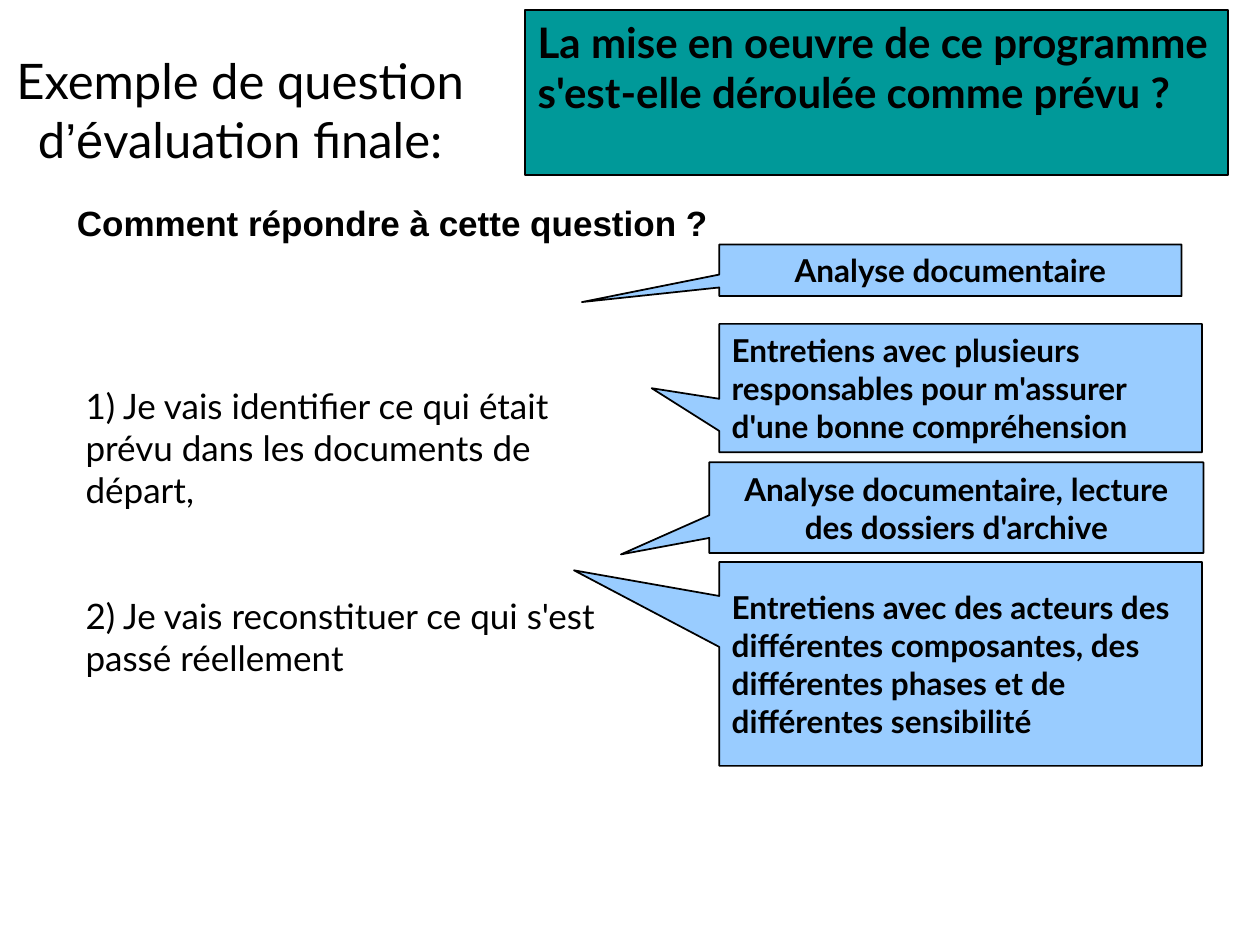
import pptx
import pptx.dml.color
import pptx.enum.shapes
import pptx.enum.text
import pptx.util
from dataclasses import dataclass

Cm, Pt = pptx.util.Cm, pptx.util.Pt
Align = pptx.enum.text.PP_ALIGN
Anchor = pptx.enum.text.MSO_ANCHOR
Shape = pptx.enum.shapes.MSO_SHAPE


@dataclass(frozen=True)
class Theme:
    ink: str = "000000"
    question_fill: str = "009999"
    callout_fill: str = "99CCFF"
    font: str = "Lato"
    alternate_font: str = "Arial"
    title: int = 28
    question: int = 24
    body: int = 20
    callout: int = 18


theme = Theme()


def write(shape, texts, size, font=theme.font, bold=False, align=Align.LEFT, anchor=Anchor.TOP):
    """Fill the text frame with one uniformly formatted paragraph per text."""
    frame = shape.text_frame
    frame.word_wrap = True
    frame.auto_size = pptx.enum.text.MSO_AUTO_SIZE.NONE
    frame.vertical_anchor = anchor
    frame.text = "\n".join(texts)
    for paragraph in frame.paragraphs:
        paragraph.alignment = align
        paragraph.space_before = Pt(0)
        paragraph.font.name = font
        paragraph.font.size = Pt(size)
        paragraph.font.bold = bold
        paragraph.font.color.rgb = pptx.dml.color.RGBColor.from_string(theme.ink)


def add_box(kind, box, fill):
    shape = slide.shapes.add_shape(kind, *map(Cm, box))
    shape.shadow.inherit = False
    shape.fill.solid()
    shape.fill.fore_color.rgb = pptx.dml.color.RGBColor.from_string(fill)
    shape.line.color.rgb = pptx.dml.color.RGBColor.from_string(theme.ink)
    shape.line.width = Pt(1)
    return shape


presentation = pptx.Presentation()
presentation.slide_width, presentation.slide_height = Cm(25.4), Cm(19.05)
slide = presentation.slides.add_slide(presentation.slide_layouts[1])

# Title, with the apostrophe and the accent in the alternate font
title = slide.shapes.title
title.left, title.top, title.width, title.height = map(Cm, (0, 0.71, 9.68, 3))
write(title, ["Exemple de question d"], theme.title, align=Align.CENTER, anchor=Anchor.MIDDLE)
title_paragraph = title.text_frame.paragraphs[0]
accent = title_paragraph.add_run()
accent.text = "’é"
accent.font.name = theme.alternate_font
title_paragraph.add_run().text = "valuation finale:"

# Evaluation question
question = add_box(Shape.RECTANGLE, (10.59, 0.2, 14.17, 3.33), theme.question_fill)
write(question, ["La mise en oeuvre de ce programme s'est-elle déroulée comme prévu ?"],
      theme.question, bold=True)

heading = slide.shapes.add_textbox(Cm(1.3), Cm(3.94), Cm(14), Cm(1.09))
write(heading, ["Comment répondre à cette question ?"], theme.body,
      font=theme.alternate_font, bold=True)

# Steps
steps = slide.placeholders[1]
steps.left, steps.top, steps.width, steps.height = map(Cm, (1.47, 7.62, 11.63, 6.17))
write(steps, ["1) Je vais identifier ce qui était prévu dans les documents de départ,",
              "2) Je vais reconstituer ce qui s'est passé réellement"], theme.body)
for paragraph in steps.text_frame.paragraphs:
    properties = paragraph._p.get_or_add_pPr()
    properties.set("marL", "0")
    properties.set("indent", "0")
    properties.append(pptx.oxml.parse_xml(
        '<a:buNone xmlns:a="http://schemas.openxmlformats.org/drawingml/2006/main"/>'))
    # Bullet settings come before the default run properties
    properties.append(properties.find(pptx.oxml.ns.qn("a:defRPr")))
steps.text_frame.paragraphs[1].space_before = Pt(48)

# Methods: box, pointer tip relative to the box centre, alignment, text
callouts = [
    ((14.5, 4.93, 9.32, 1.04), (-0.797, 0.616), Align.CENTER, "Analyse documentaire"),
    ((14.5, 6.53, 9.73, 2.59), (-0.64, 0.001), Align.LEFT,
     "Entretiens avec plusieurs responsables pour m'assurer d'une bonne compréhension"),
    ((14.3, 9.32, 9.96, 1.83), (-0.679, 0.515), Align.CENTER,
     "Analyse documentaire, lecture des dossiers d'archive"),
    ((14.5, 11.33, 9.73, 4.11), (-0.801, -0.459), Align.LEFT,
     "Entretiens avec des acteurs des différentes composantes, des différentes phases "
     "et de différentes sensibilité"),
]
for box, tip, align, text in callouts:
    callout = add_box(Shape.RECTANGULAR_CALLOUT, box, theme.callout_fill)
    callout.adjustments[0], callout.adjustments[1] = tip
    write(callout, [text], theme.callout, bold=True, align=align, anchor=Anchor.MIDDLE)

presentation.save("out.pptx")
